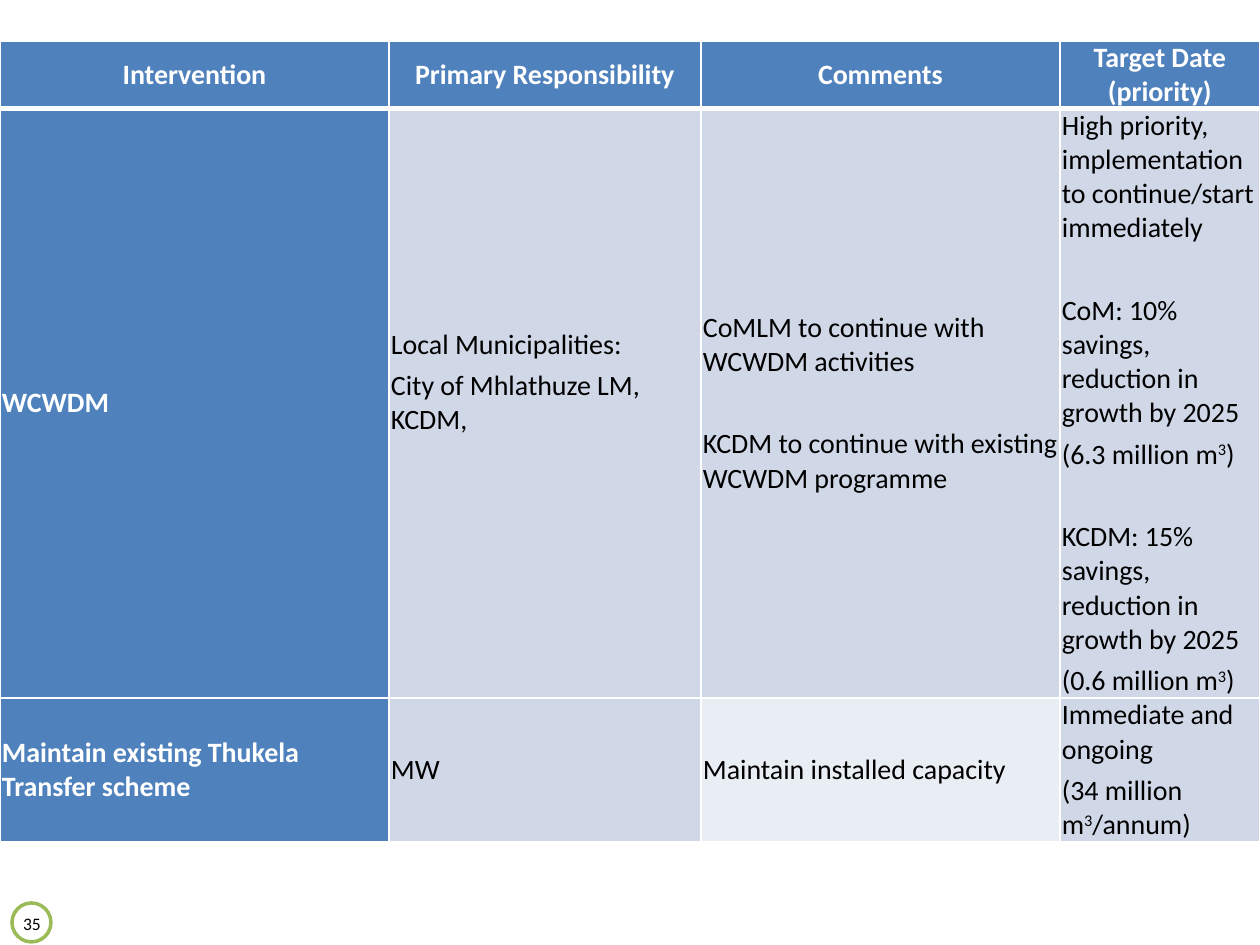
from lxml import etree
from pptx import Presentation
from pptx.dml.color import RGBColor
from pptx.enum.shapes import MSO_SHAPE
from pptx.enum.text import MSO_ANCHOR, PP_ALIGN
from pptx.oxml.ns import qn
from pptx.util import Emu, Pt

PX = 914400 / 126
OVAL = MSO_SHAPE.OVAL
CENTER, LEFT = PP_ALIGN.CENTER, PP_ALIGN.LEFT
MIDDLE = MSO_ANCHOR.MIDDLE

FONT = "Calibri"
WHITE = RGBColor(0xFF, 0xFF, 0xFF)
BLACK = RGBColor(0, 0, 0)
BLUE = RGBColor(0x4F, 0x81, 0xBD)
BAND = RGBColor(0xD0, 0xD8, 0xE8)
PALE = RGBColor(0xE9, 0xED, 0xF4)
GREEN = RGBColor(0x9B, 0xBB, 0x59)

COLUMNS = [389, 312, 359, 200]
ROWS = [67, 590, 144]
GAP = "gap"  # one line of space before the next paragraph
LINE_PT = 23.5

# Each cell lists its paragraphs; ^ encloses superscript text.
CELLS = [
    [["Intervention"], ["Primary Responsibility"], ["Comments"],
     ["Target Date (priority)"]],
    [["WCWDM"],
     ["Local Municipalities:", "City of Mhlathuze LM, KCDM,"],
     ["CoMLM to continue with WCWDM activities", GAP,
      "KCDM to continue with existing WCWDM programme"],
     ["High priority, implementation to continue/start immediately", GAP,
      "CoM: 10% savings, reduction in growth by 2025",
      "(6.3 million m^3^)", GAP,
      "KCDM: 15% savings, reduction in growth by 2025",
      "(0.6 million m^3^)"]],
    [["Maintain existing Thukela Transfer scheme"], ["MW"],
     ["Maintain installed capacity"],
     ["Immediate and ongoing", "(34 million m^3^/annum)"]],
]


def px(n):
    return Emu(round(n * PX))


def style(p, size, color, bold=False, align=LEFT):
    p.alignment = align
    f = p.font
    f.name, f.size, f.bold = FONT, Pt(size), bold
    f.color.rgb = color


def add_runs(p, text):
    for i, part in enumerate(text.split("^")):
        r = p.add_run()
        r.text = part
        if i % 2:
            r.font._element.set("baseline", "30000")


def add_border(cell, side, points):
    ln = etree.SubElement(cell._tc.get_or_add_tcPr(), qn("a:ln" + side),
                          w=str(Pt(points)))
    fill = etree.SubElement(ln, qn("a:solidFill"))
    etree.SubElement(fill, qn("a:srgbClr"), val=str(WHITE))


def fill_cell(cell, lines, fill, heading, align):
    cell.margin_left = cell.margin_right = px(2)
    cell.margin_top = cell.margin_bottom = 0
    cell.vertical_anchor = MIDDLE
    cell.fill.solid()
    cell.fill.fore_color.rgb = fill
    tf = cell.text_frame
    before = 0
    for i, line in enumerate(lines):
        if line == GAP:
            before += LINE_PT
            continue
        p = tf.add_paragraph() if i else tf.paragraphs[0]
        p.space_before, p.space_after = Pt(before), Pt(2)
        style(p, 16, WHITE if heading else BLACK, heading, align)
        add_runs(p, line)
        before = 2


def add_interventions(s):
    table = s.shapes.add_table(len(ROWS), len(COLUMNS), 0, px(41),
                               px(sum(COLUMNS)), px(sum(ROWS))).table
    for column, width in zip(table.columns, COLUMNS):
        column.width = px(width)
    for row, height in zip(table.rows, ROWS):
        row.height = px(height)
    for i, row in enumerate(CELLS):
        for j, lines in enumerate(row):
            cell = table.cell(i, j)
            for side in "LRTB":
                under_header = (i, side) in ((0, "B"), (1, "T"))
                add_border(cell, side, 3 if under_header else 1)
            heading = i == 0 or j == 0
            fill = BLUE if heading else PALE if (i, j) == (2, 2) else BAND
            fill_cell(cell, lines, fill, heading, LEFT if i else CENTER)
    # The responsibility text sits one line above the middle of its cell.
    table.cell(1, 1).margin_bottom = Pt(LINE_PT)


def add_page_number(s, number):
    ring = s.shapes.add_shape(OVAL, px(12), px(903), px(39), px(39))
    ring.shadow.inherit = False
    ring.fill.solid()
    ring.fill.fore_color.rgb = WHITE
    ring.line.color.rgb = GREEN
    ring.line.width = Pt(2)
    tf = s.shapes.add_textbox(px(12), px(907), px(40), px(25)).text_frame
    tf.word_wrap = True
    tf.margin_left = tf.margin_right = 0
    p = tf.paragraphs[0]
    style(p, 10, BLACK, align=CENTER)
    add_runs(p, number)


def main():
    prs = Presentation()
    prs.slide_width, prs.slide_height = px(1260), px(945)
    s = prs.slides.add_slide(prs.slide_layouts[6])
    add_page_number(s, "35")
    add_interventions(s)
    prs.save("out.pptx")


if __name__ == "__main__":
    main()
